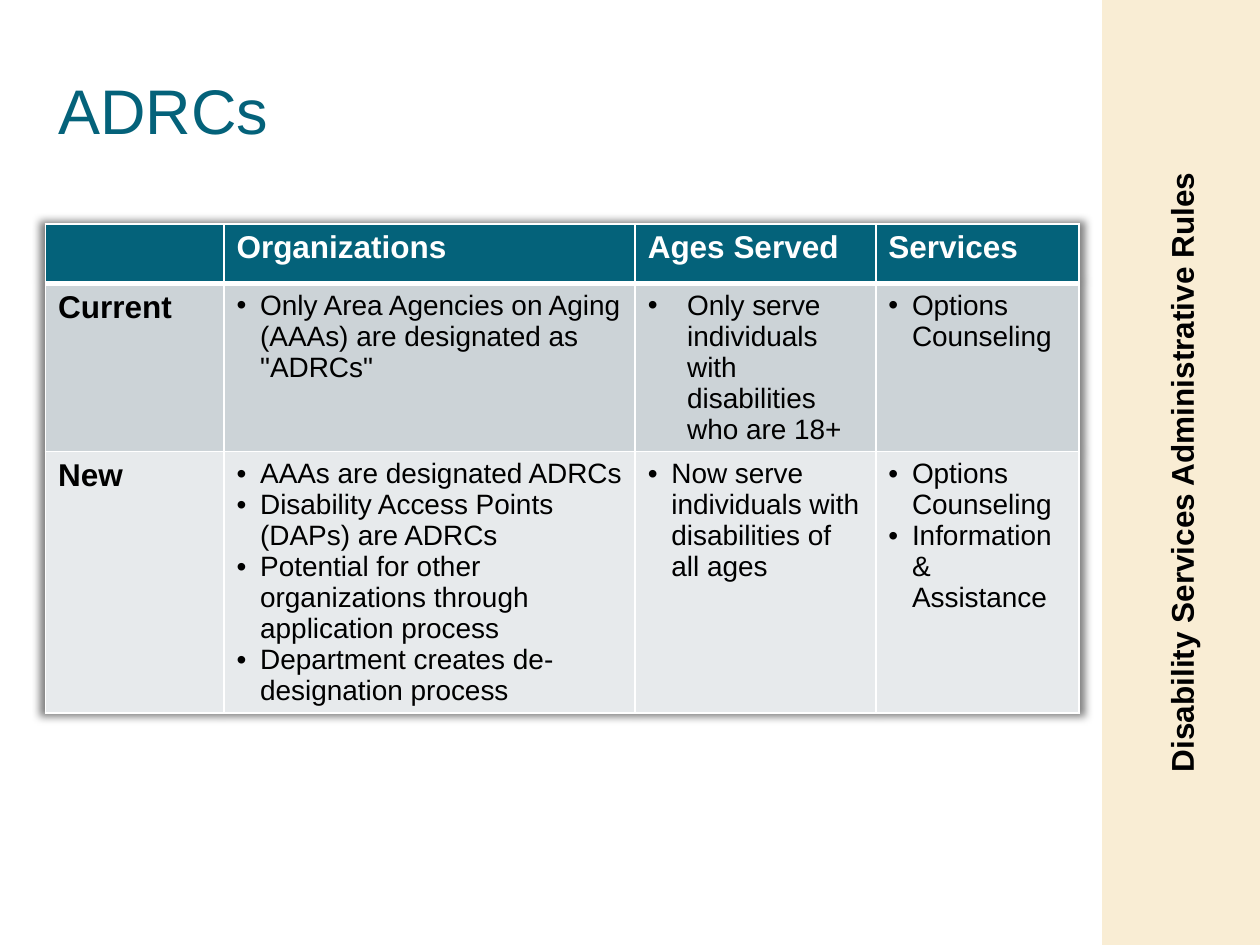
from lxml import etree
from pptx import Presentation
from pptx import util as u
from pptx.dml.color import RGBColor
from pptx.enum import shapes, text
from pptx.oxml import parse_xml
from pptx.oxml.ns import nsdecls, qn

COLORS = {
    "teal": "04627A", "sand": "F9EDD4", "white": "FFFFFF",
    "black": "000000", "current": "CCD3D7", "new": "E7EAEC",
}
HEADING = {"name": "Arial", "size": u.Pt(18), "bold": True}
BODY = {"name": "Arial", "size": u.Pt(16), "bold": False}
TITLE = {"name": "Arial", "size": u.Pt(36), "bold": False}

COLUMN_WIDTHS = [102, 235, 137.5, 116]
ROW_HEIGHTS = [34, 91, 101.5]
INDENT, WIDE_INDENT = 13.5, 22.5

HEADERS = ["", "Organizations", "Ages Served", "Services"]
RULES = [
    ("Current", "current", [
        ['Only Area Agencies on Aging (AAAs) are designated as "ADRCs"'],
        ["Only serve individuals with disabilities who are 18+"],
        ["Options Counseling"],
    ]),
    ("New", "new", [
        ["AAAs are designated ADRCs",
         "Disability Access Points (DAPs) are ADRCs",
         "Potential for other organizations through application process",
         "Department creates de-designation process"],
        ["Now serve individuals with disabilities of all ages"],
        ["Options Counseling", "Information & Assistance"],
    ]),
]


def rgb(color):
    return RGBColor.from_string(COLORS[color])


def format_font(font, style, color):
    for attribute, value in style.items():
        setattr(font, attribute, value)
    font.color.rgb = rgb(color)


def add_bullet(paragraph, indent):
    properties = paragraph._p.get_or_add_pPr()
    properties.set("marL", str(u.Pt(indent)))
    properties.set("indent", str(-u.Pt(indent)))
    etree.SubElement(properties, qn("a:buFont"), typeface="Arial")
    etree.SubElement(properties, qn("a:buChar"), char="•")


def set_borders(cell, top=1, bottom=1):
    widths = {"lnL": 1, "lnR": 1, "lnT": top, "lnB": bottom}
    properties = cell._tc.get_or_add_tcPr()
    for position, (side, width) in enumerate(widths.items()):
        properties.insert(position, parse_xml(
            f'<a:{side} {nsdecls("a")} w="{u.Pt(width)}"><a:solidFill>'
            f'<a:srgbClr val="{COLORS["white"]}"/></a:solidFill></a:{side}>'))


def fill_cell(cell, lines, style, color, fill, indent=None):
    cell.fill.solid()
    cell.fill.fore_color.rgb = rgb(fill)
    cell.text = "\n".join(lines)
    for paragraph in cell.text_frame.paragraphs:
        if indent:
            add_bullet(paragraph, indent)
        format_font(paragraph.font, style, color)


def add_table_shadow(table):
    table._tbl.tblPr.insert(0, parse_xml(
        f'<a:effectLst {nsdecls("a")}><a:outerShdw blurRad="{u.Pt(5)}" '
        'sx="101000" sy="101000" algn="ctr" rotWithShape="0">'
        f'<a:srgbClr val="{COLORS["black"]}"><a:alpha val="50000"/></a:srgbClr>'
        '</a:outerShdw></a:effectLst>'))


def add_title(slide, wording):
    title = slide.shapes.title
    title.left, title.top, title.width, title.height = map(u.Pt, (26, 44.5, 620.5, 41))
    frame = title.text_frame
    frame.text = wording
    frame.vertical_anchor = text.MSO_ANCHOR.MIDDLE
    paragraph = frame.paragraphs[0]
    paragraph.alignment = text.PP_ALIGN.LEFT
    paragraph.line_spacing = 0.9
    format_font(paragraph.font, TITLE, "teal")


def add_rules_table(slide):
    table = slide.shapes.add_table(
        len(ROW_HEIGHTS), len(COLUMN_WIDTHS), u.Pt(26), u.Pt(128),
        u.Pt(sum(COLUMN_WIDTHS)), u.Pt(sum(ROW_HEIGHTS))).table
    for column, width in zip(table.columns, COLUMN_WIDTHS):
        column.width = u.Pt(width)
    for row, height in zip(table.rows, ROW_HEIGHTS):
        row.height = u.Pt(height)

    # Header row, with a heavier rule below it
    for column, header in enumerate(HEADERS):
        cell = table.cell(0, column)
        fill_cell(cell, [header], HEADING, "white", "teal")
        set_borders(cell, bottom=3)

    # Current and new rules
    for row, (label, fill, topics) in enumerate(RULES, start=1):
        fill_cell(table.cell(row, 0), [label], HEADING, "black", fill)
        for column, lines in enumerate(topics, start=1):
            indent = WIDE_INDENT if (row, column) == (1, 2) else INDENT
            fill_cell(table.cell(row, column), lines, BODY, "black", fill, indent)
        for cell in table.rows[row].cells:
            set_borders(cell, top=3 if row == 1 else 1)
    add_table_shadow(table)


def add_side_banner(slide, wording):
    banner = slide.shapes.add_shape(
        shapes.MSO_SHAPE.RECTANGLE, u.Pt(405), u.Pt(225), u.Pt(540), u.Pt(90))
    banner.rotation = 270
    banner.shadow.inherit = False
    banner.fill.solid()
    banner.fill.fore_color.rgb = rgb("sand")
    banner.line.color.rgb = rgb("sand")
    banner.line.width = u.Pt(1)
    frame = banner.text_frame
    frame.text = wording
    frame.word_wrap = True
    frame.vertical_anchor = text.MSO_ANCHOR.MIDDLE
    frame.paragraphs[0].alignment = text.PP_ALIGN.CENTER
    format_font(frame.paragraphs[0].font, HEADING, "black")


def main():
    deck = Presentation()
    deck.slide_width, deck.slide_height = u.Pt(720), u.Pt(540)
    slide = deck.slides.add_slide(deck.slide_layouts[5])
    add_title(slide, "ADRCs")
    add_rules_table(slide)
    add_side_banner(slide, "Disability Services Administrative Rules")
    deck.save("out.pptx")


if __name__ == "__main__":
    main()
